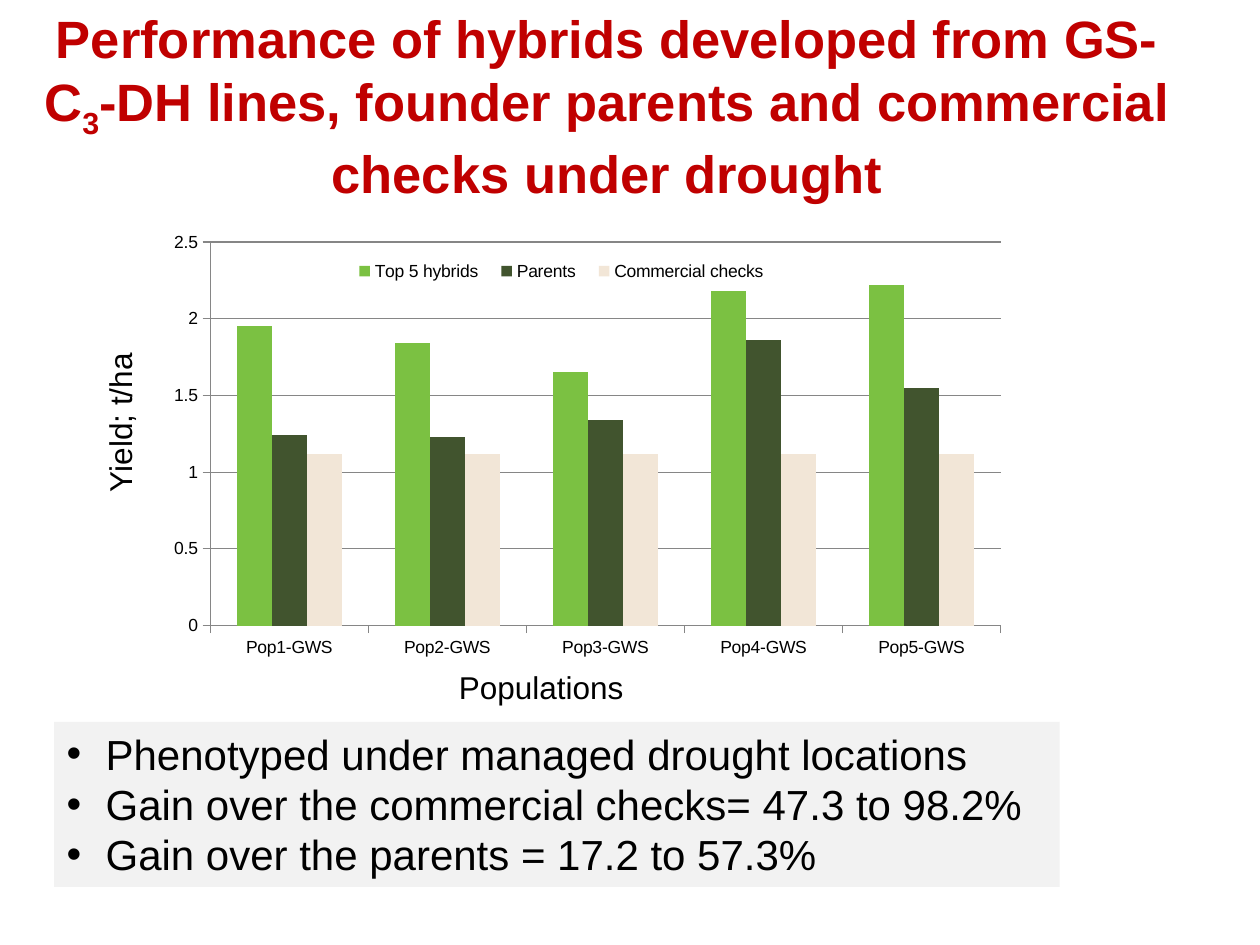
"""Build a slide comparing hybrid yields with parents and checks under drought."""
import pptx
import pptx.chart.data
import pptx.dml.color
import pptx.enum.chart
import pptx.enum.text
import pptx.oxml
import pptx.oxml.ns
import pptx.util
from pptx.util import Inches

COLORS = {"title": "C00000", "text": "000000", "panel": "F2F2F2", "axis": "868686",
          "hybrids": "7BC142", "parents": "41542E", "checks": "F2E6D7"}
POPULATIONS = [f"Pop{i}-GWS" for i in range(1, 6)]
SERIES = [("Top 5 hybrids", "hybrids", [1.95, 1.84, 1.65, 2.18, 2.22]),
          ("Parents", "parents", [1.24, 1.23, 1.34, 1.86, 1.55]),
          ("Commercial checks", "checks", [1.12] * 5)]
FINDINGS = ["Phenotyped under managed drought locations",
            "Gain over the commercial checks= 47.3 to 98.2%",
            "Gain over the parents = 17.2 to 57.3%"]
CENTER = pptx.enum.text.PP_ALIGN.CENTER


def rgb(key):
    return pptx.dml.color.RGBColor.from_string(COLORS[key])


def set_font(font, size, color="text", bold=False):
    values = {"name": "Arial", "size": pptx.util.Pt(size), "bold": bold}
    for name, value in values.items():
        setattr(font, name, value)
    font.color.rgb = rgb(color)


def add_box(slide, box):
    sp = slide.shapes.add_textbox(*map(Inches, box))
    sp.text_frame.word_wrap = True
    return sp


def add_title(slide, box, runs):
    tf = add_box(slide, box).text_frame
    tf.vertical_anchor = pptx.enum.text.MSO_ANCHOR.MIDDLE
    p = tf.paragraphs[0]
    p.alignment = CENTER
    for text, baseline in runs:
        r = p.add_run()
        r.text = text
        set_font(r.font, 30, "title", True)
        if baseline:
            r.font._element.set("baseline", str(baseline * 1000))


def add_axis_label(slide, box, text, vertical=False):
    tf = add_box(slide, box).text_frame
    if vertical:
        tf._txBody.bodyPr.set("vert", "vert270")
    p = tf.paragraphs[0]
    p.text, p.alignment = text, CENTER
    set_font(p.runs[0].font, 18)


def add_bullets(slide, box, lines):
    sp = add_box(slide, box)
    sp.fill.solid()
    sp.fill.fore_color.rgb = rgb("panel")
    tf = sp.text_frame
    for i, line in enumerate(lines):
        p = tf.paragraphs[0] if i == 0 else tf.add_paragraph()
        p.text = line
        pPr = p._p.get_or_add_pPr()
        indent = Inches(0.31)
        pPr.set("marL", str(indent))
        pPr.set("indent", str(-indent))
        pPr.append(pptx.oxml.parse_xml(
            f'<a:buFont {pptx.oxml.ns.nsdecls("a")} typeface="Arial"/>'))
        pPr.append(pptx.oxml.parse_xml(
            f'<a:buChar {pptx.oxml.ns.nsdecls("a")} char="•"/>'))
        set_font(p.runs[0].font, 24)


def set_layout(parent, index, box, inner=False):
    for old in parent.findall(pptx.oxml.ns.qn("c:layout")):
        parent.remove(old)
    target = '<c:layoutTarget val="inner"/>' if inner else ""
    modes = "".join(f'<c:{k}Mode val="edge"/>' for k in "xy")
    sizes = "".join(f'<c:{k} val="{v}"/>' for k, v in zip("xywh", box))
    parent.insert(index, pptx.oxml.parse_xml(
        f'<c:layout {pptx.oxml.ns.nsdecls("c")}><c:manualLayout>'
        f'{target}{modes}{sizes}</c:manualLayout></c:layout>'))


def add_yield_chart(slide, box):
    data = pptx.chart.data.CategoryChartData()
    data.categories = POPULATIONS
    for name, _, values in SERIES:
        data.add_series(name, values)
    kind = pptx.enum.chart.XL_CHART_TYPE.COLUMN_CLUSTERED
    chart = slide.shapes.add_chart(kind, *map(Inches, box), data).chart
    set_font(chart.font, 10)
    chart.has_title = False
    plot = chart.plots[0]
    for name, value in {"gap_width": 150, "overlap": 0, "vary_by_categories": False}.items():
        setattr(plot, name, value)
    for series, (_, color, _) in zip(plot.series, SERIES):
        series.format.fill.solid()
        series.format.fill.fore_color.rgb = rgb(color)
    style_axes(chart)
    chart.has_legend = True
    chart.legend.position = pptx.enum.chart.XL_LEGEND_POSITION.RIGHT
    chart.legend.include_in_layout = False
    set_layout(chart.legend._element, 1, (0.21, 0.07, 0.5, 0.07))
    set_layout(chart._chartSpace.chart.plotArea, 0, (0.06, 0.04, 0.9, 0.86), inner=True)


def style_axes(chart):
    axis = chart.value_axis
    scale = {"minimum_scale": 0, "maximum_scale": 2.5, "major_unit": 0.5,
             "has_major_gridlines": True}
    for name, value in scale.items():
        setattr(axis, name, value)
    axis.tick_labels.number_format = "General"
    axis.tick_labels.number_format_is_linked = False
    for item in (axis, chart.category_axis):
        item.major_tick_mark = pptx.enum.chart.XL_TICK_MARK.OUTSIDE
    for item in (axis, axis.major_gridlines, chart.category_axis):
        item.format.line.color.rgb = rgb("axis")
        item.format.line.width = pptx.util.Pt(0.75)


def main():
    prs = pptx.Presentation()
    prs.slide_width, prs.slide_height = Inches(10), Inches(7.5)
    s = prs.slides.add_slide(prs.slide_layouts[6])
    add_title(s, (0.2, 0.21, 9.24, 1.25), [
        ("Performance of hybrids developed from GS-C", 0), ("3", -25),
        ("-DH lines, founder parents and commercial checks under drought", 0)])
    add_axis_label(s, (0.75, 1.78, 0.5, 3.15), "Yield; t/ha", vertical=True)
    add_axis_label(s, (1.54, 5.25, 5.51, 0.4), "Populations")
    add_bullets(s, (0.43, 5.73, 7.98, 1.31), FINDINGS)
    add_yield_chart(s, (1.25, 1.78, 6.97, 3.54))
    prs.save("out.pptx")


if __name__ == "__main__":
    main()
